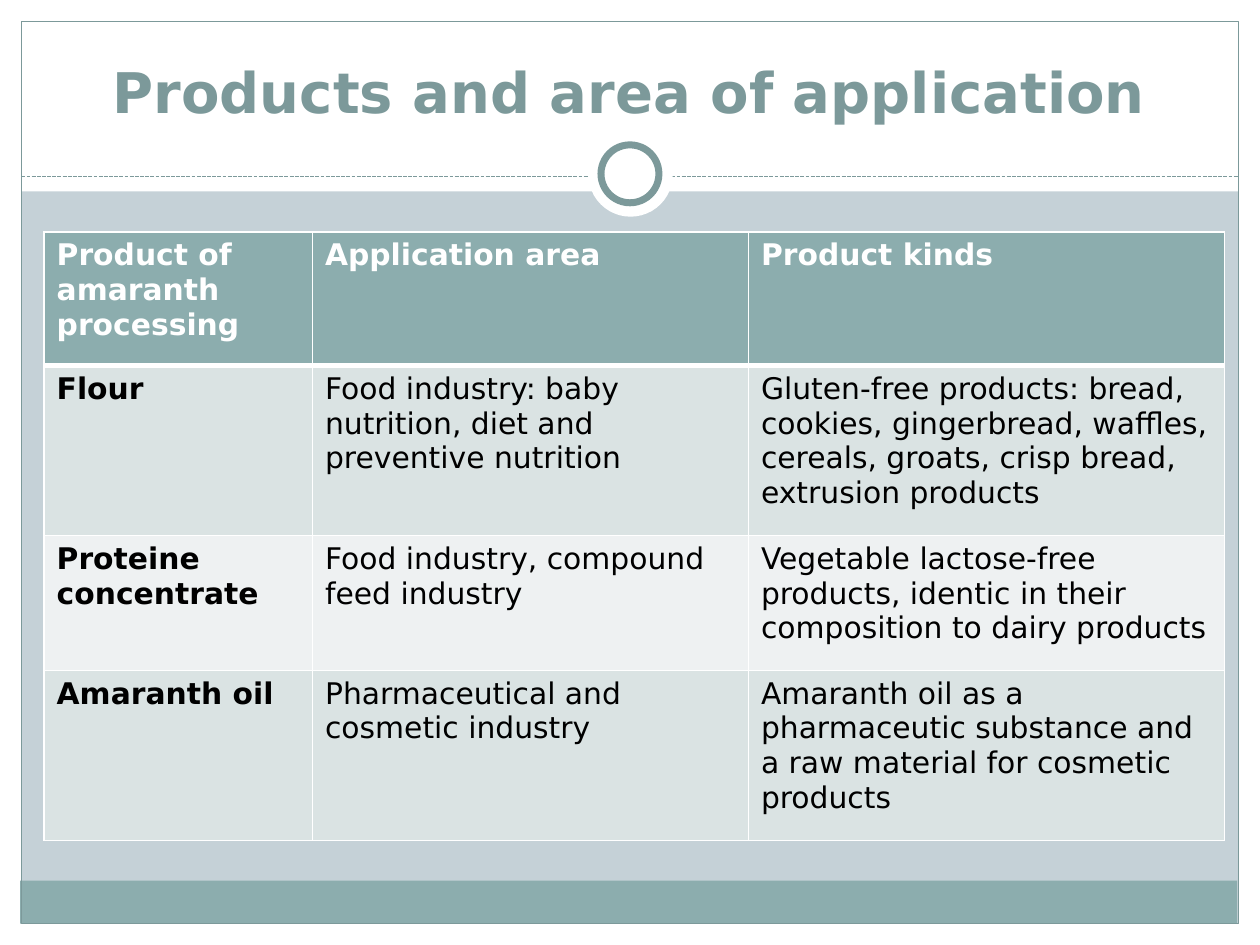
from lxml.etree import SubElement
from pptx import Presentation
from pptx.dml.color import RGBColor
from pptx.enum.dml import MSO_LINE
from pptx.enum.shapes import MSO_CONNECTOR, MSO_SHAPE
from pptx.enum.text import MSO_ANCHOR, PP_ALIGN
from pptx.oxml.ns import qn
from pptx.util import Inches, Pt

WHITE = RGBColor(0xFF, 0xFF, 0xFF)
BLACK = RGBColor(0x00, 0x00, 0x00)
BACKGROUND = RGBColor(0xC5, 0xD1, 0xD7)
TEAL = RGBColor(0x8C, 0xAD, 0xAE)
DARK_TEAL = RGBColor(0x7C, 0x99, 0x9A)
ODD_ROW = RGBColor(0xDA, 0xE3, 0xE3)
EVEN_ROW = RGBColor(0xEE, 0xF1, 0xF2)
FONT = "DejaVu Sans"

COLUMN_WIDTHS = [2.13, 3.46, 3.78]
ROW_HEIGHTS = [1.06, 1.35, 1.07, 1.35]
ROWS = [
    ("Product of amaranth processing", "Application area", "Product kinds"),
    ("Flour",
     "Food industry: baby nutrition, diet and preventive nutrition",
     "Gluten-free products: bread, cookies, gingerbread, waffles, cereals, "
     "groats, crisp bread, extrusion products"),
    ("Proteine concentrate",
     "Food industry, compound feed industry",
     "Vegetable lactose-free products, identic in their composition to dairy products"),
    ("Amaranth oil",
     "Pharmaceutical and cosmetic industry",
     "Amaranth oil as a pharmaceutic substance and a raw material for cosmetic products"),
]


def add_block(slide, kind, box, fill=None, line=None, line_width=0.75):
    shape = slide.shapes.add_shape(kind, *map(Inches, box))
    shape.shadow.inherit = False
    if fill is None:
        shape.fill.background()
    else:
        shape.fill.solid()
        shape.fill.fore_color.rgb = fill
    if line is None:
        shape.line.fill.background()
    else:
        shape.line.color.rgb = line
        shape.line.width = Pt(line_width)


def add_divider(slide, left, right, top):
    connector = slide.shapes.add_connector(
        MSO_CONNECTOR.STRAIGHT, Inches(left), Inches(top), Inches(right), Inches(top))
    connector.line.color.rgb = DARK_TEAL
    connector.line.width = Pt(0.75)
    connector.line.dash_style = MSO_LINE.SQUARE_DOT
    SubElement(connector._element.spPr, qn("a:effectLst"))


def add_run(paragraph, text, size, color, bold):
    run = paragraph.add_run()
    run.text = text
    run.font.name = FONT
    run.font.size = Pt(size)
    run.font.bold = bold
    run.font.color.rgb = color


def add_title(slide, text):
    text_box = slide.shapes.add_textbox(
        Inches(0.33), Inches(0.21), Inches(9.33), Inches(0.83))
    frame = text_box.text_frame
    frame.word_wrap = True
    frame.vertical_anchor = MSO_ANCHOR.BOTTOM
    paragraph = frame.paragraphs[0]
    paragraph.alignment = PP_ALIGN.CENTER
    add_run(paragraph, text, 32, DARK_TEAL, True)


def set_borders(cell, widths):
    properties = cell._tc.get_or_add_tcPr()
    for side, width in widths.items():
        border = SubElement(properties, qn(f"a:ln{side}"), w=str(Pt(width)))
        fill = SubElement(border, qn("a:solidFill"))
        SubElement(fill, qn("a:srgbClr"), val=str(WHITE))


def style_cell(cell, text, row, column):
    header = row == 0
    set_borders(cell, {"L": 1, "R": 1, "T": 3 if row == 1 else 1, "B": 3 if header else 1})
    cell.fill.solid()
    cell.fill.fore_color.rgb = TEAL if header else ODD_ROW if row % 2 else EVEN_ROW
    add_run(cell.text_frame.paragraphs[0], text, 17,
            WHITE if header else BLACK, header or column == 0)


def add_product_table(slide):
    table = slide.shapes.add_table(
        len(ROWS), len(COLUMN_WIDTHS), Inches(0.35), Inches(1.84),
        Inches(sum(COLUMN_WIDTHS)), Inches(sum(ROW_HEIGHTS))).table
    for column, width in zip(table.columns, COLUMN_WIDTHS):
        column.width = Inches(width)
    for row, height in zip(table.rows, ROW_HEIGHTS):
        row.height = Inches(height)
    for row, texts in enumerate(ROWS):
        for column, text in enumerate(texts):
            style_cell(table.cell(row, column), text, row, column)


def add_frame(slide):
    margins = [(0, 7.33, 10, 0.17), (0, 0, 10, 1.52),
               (0, 0, 0.17, 7.5), (9.83, 0, 0.17, 7.5)]
    for box in margins:
        add_block(slide, MSO_SHAPE.RECTANGLE, box, WHITE)
    add_block(slide, MSO_SHAPE.RECTANGLE, (0.16, 6.99, 9.66, 0.34), TEAL)
    add_block(slide, MSO_SHAPE.RECTANGLE, (0.17, 0.17, 9.66, 7.16), line=DARK_TEAL)
    add_divider(slide, 0.17, 9.83, 1.4)
    add_block(slide, MSO_SHAPE.OVAL, (4.67, 1.05, 0.67, 0.67), WHITE)
    add_block(slide, MSO_SHAPE.OVAL, (4.77, 1.15, 0.46, 0.46), WHITE, DARK_TEAL, 4)


def main():
    presentation = Presentation()
    presentation.slide_width = Inches(10)
    presentation.slide_height = Inches(7.5)
    slide = presentation.slides.add_slide(presentation.slide_layouts[6])
    slide.background.fill.solid()
    slide.background.fill.fore_color.rgb = BACKGROUND
    add_frame(slide)
    add_title(slide, "Products and area of application")
    add_product_table(slide)
    presentation.save("out.pptx")


if __name__ == "__main__":
    main()
